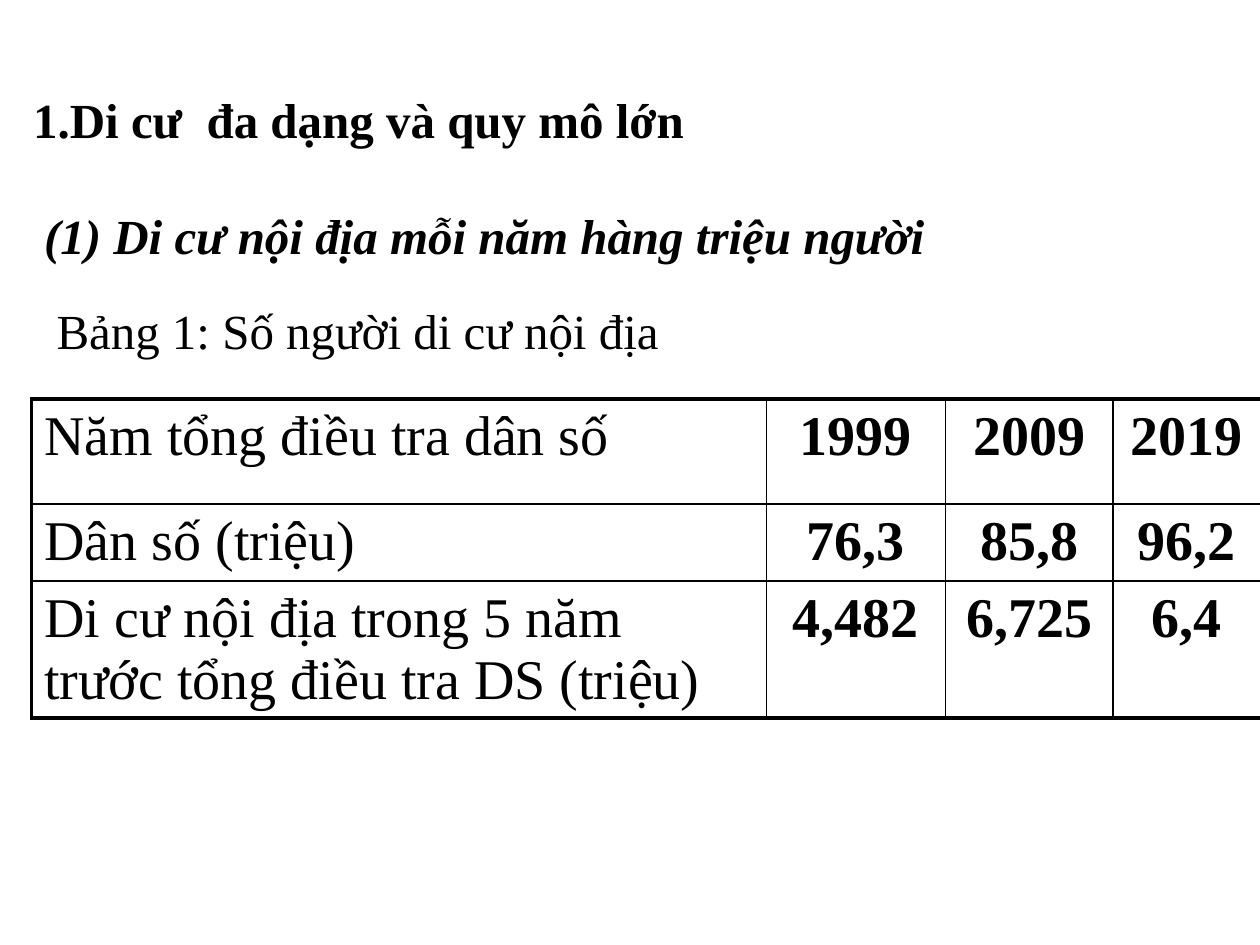
from lxml import etree
from pptx import Presentation, util as u
from pptx.dml.color import RGBColor
from pptx.enum import text as t
from pptx.oxml.ns import qn

INK = {"text": "000000", "line": "000000"}
FONT = "Times New Roman"
THIN, THICK = 1, 2.25


def write(frame, words, size=28, bold=False, italic=False, align=t.PP_ALIGN.LEFT):
    """Put one formatted paragraph into a text frame."""
    frame.word_wrap = True
    par = frame.paragraphs[0]
    par.alignment = align
    run = par.add_run()
    run.text = words
    font = run.font
    font.name, font.size = FONT, u.Pt(size)
    font.bold, font.italic = bold, italic
    font.color.rgb = RGBColor.from_string(INK["text"])


def edge(cell, side, width):
    """Draw one solid border of a cell."""
    line = etree.SubElement(cell._tc.get_or_add_tcPr(), qn(f"a:ln{side}"), w=str(u.Pt(width)))
    fill = etree.SubElement(line, qn("a:solidFill"))
    etree.SubElement(fill, qn("a:srgbClr"), val=INK["line"])


def label(slide, box, words, **style):
    """Place a line of text in its box."""
    shape = slide.shapes.add_textbox(*map(u.Cm, box))
    shape.text_frame.auto_size = t.MSO_AUTO_SIZE.SHAPE_TO_FIT_TEXT
    write(shape.text_frame, words, **style)


def grid(slide, left, top, cols, rows, data):
    """Build the census table with a heavy left, top and bottom edge."""
    box = map(u.Cm, (left, top, sum(cols), sum(rows)))
    table = slide.shapes.add_table(len(rows), len(cols), *box).table
    table.first_row = table.horz_banding = False
    for col, width in zip(table.columns, cols):
        col.width = u.Cm(width)
    for row, height in zip(table.rows, rows):
        row.height = u.Cm(height)
    last = len(rows) - 1
    for r, line in enumerate(data):
        for c, words in enumerate(line):
            cell = table.cell(r, c)
            align = t.PP_ALIGN.CENTER if c else t.PP_ALIGN.LEFT
            write(cell.text_frame, words, size=32, bold=c > 0, align=align)
            edge(cell, "L", THIN if c else THICK)
            edge(cell, "R", THIN)
            edge(cell, "T", THIN if r else THICK)
            edge(cell, "B", THICK if r == last else THIN)
            cell.fill.background()


def main():
    deck = Presentation()
    deck.slide_width, deck.slide_height = u.Cm(25.4), u.Cm(19.05)
    slide = deck.slides.add_slide(deck.slide_layouts[6])

    # Census table
    grid(slide, 0.64, 8.04, (14.81, 3.61, 3.38, 2.97), (2.12, 1.55, 2.76), [
        ("Năm tổng điều tra dân số", "1999", "2009", "2019"),
        ("Dân số (triệu)", "76,3", "85,8", "96,2"),
        ("Di cư nội địa trong 5 năm trước tổng điều tra DS (triệu)", "4,482", "6,725", "6,4"),
    ])

    # Headings and table caption
    label(slide, (0.42, 1.69, 24.98, 1.45), "1.Di cư  đa dạng và quy mô lớn", bold=True)
    label(slide, (0.64, 4.02, 20.32, 1.45), "(1) Di cư nội địa mỗi năm hàng triệu người",
          bold=True, italic=True)
    label(slide, (0.89, 5.93, 24.51, 1.45), "Bảng 1: Số người di cư nội địa")

    deck.save("out.pptx")


if __name__ == "__main__":
    main()
